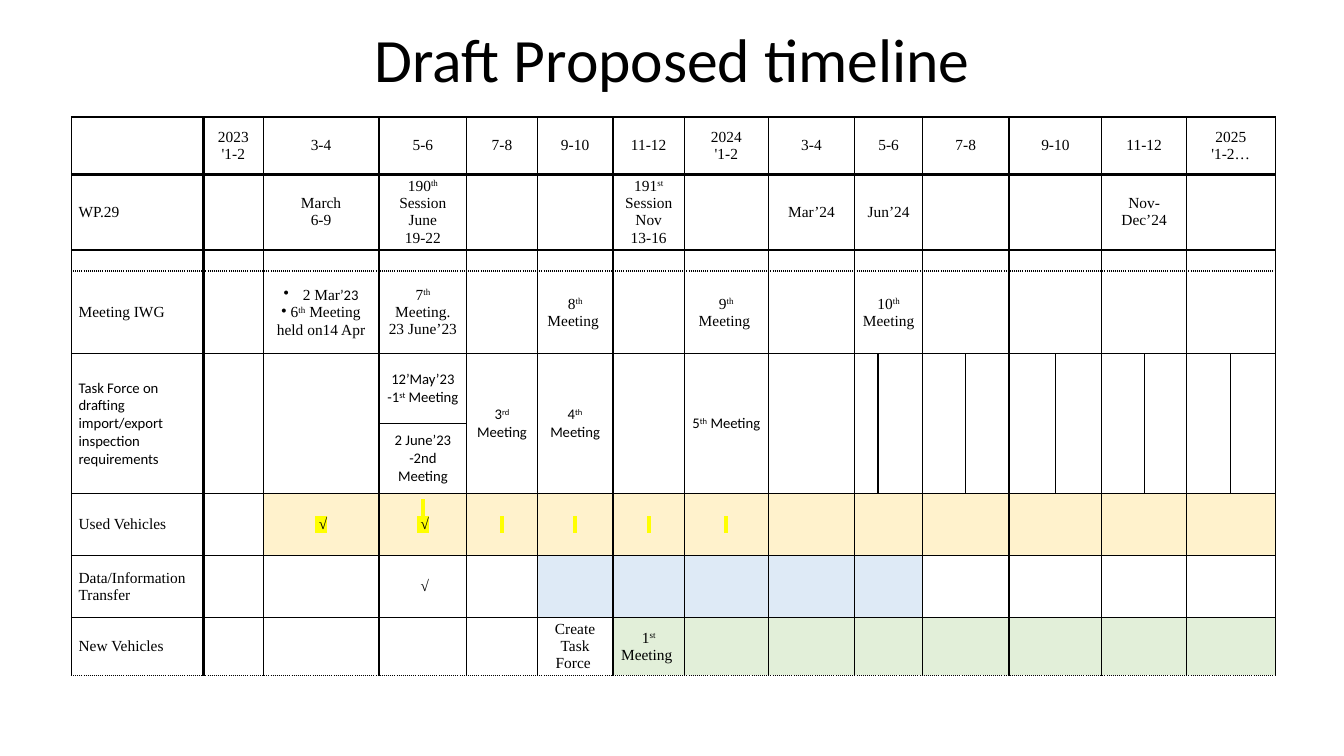
import pptx
import pptx.util
import pptx.dml.color
import pptx.enum.text
import pptx.oxml.ns
from lxml import etree

Inches, Pt = pptx.util.Inches, pptx.util.Pt
RGBColor = pptx.dml.color.RGBColor
PP_ALIGN, MSO_ANCHOR = pptx.enum.text.PP_ALIGN, pptx.enum.text.MSO_ANCHOR
qn = pptx.oxml.ns.qn

COLORS = {"ink": "000000", "mark": "FFFF00", "used": "FFF2CC",
          "data": "DEEAF6", "new": "E2EFD9"}
SERIF, SANS = ("Times New Roman", 11), ("Calibri", 10.5)
TITLE = "Draft Proposed timeline"

# One dict per table row: period number -> paragraphs.
# ^...^ is superscript, |...| is the sans face.
ROWS = [
    {1: ["2023\n'1-2"], 2: ["3-4"], 3: ["5-6"], 4: ["7-8"], 5: ["9-10"],
     6: ["11-12"], 7: ["2024\n'1-2"], 8: ["3-4"], 9: ["5-6"], 10: ["7-8"],
     11: ["9-10"], 12: ["11-12"], 13: ["2025\n'1-2…"]},
    {0: ["WP.29"], 2: ["March\n6-9"], 3: ["190^th^ Session June\n19-22"],
     6: ["191^st ^Session\nNov\n13-16"], 8: ["Mar’24"], 9: ["Jun’24"],
     12: ["Nov-Dec’24"]},
    {},
    {0: ["Meeting IWG"], 2: ["2 Mar|’23|", " 6^th^ Meeting held on14 Apr"],
     3: ["7^th^ Meeting. 23 June’23"], 5: ["8^th^ Meeting "],
     7: ["9^th^ Meeting "], 9: ["10^th^ Meeting "]},
    {0: ["|Task Force on drafting import/export inspection requirements|"],
     3: ["|12’May’23 -1^st^ Meeting|"], 4: ["|3^rd^ Meeting|"],
     5: ["|4^th^ Meeting|"], 7: ["|5^th^ Meeting|"]},
    {3: ["|2 June’23 -2nd Meeting|"]},
    {0: ["Used Vehicles"], 2: [" √"], 3: [" ", " √"],
     4: [" "], 5: [" "], 6: [" "], 7: [" "]},
    {0: ["Data/Information Transfer"], 3: [" √"]},
    {0: ["New Vehicles"], 5: ["Create Task Force "], 6: ["1^st^ Meeting "]},
]
COL_WIDTHS = [1.31, 0.59, 1.15, 0.87, 0.7, 0.75, 0.71, 0.83, 0.86, 0.23,
              0.44, 0.43, 0.43, 0.46, 0.46, 0.42, 0.42, 0.44, 0.44]
ROW_HEIGHTS = [0.57, 0.75, 0.21, 0.82, 0.69, 0.7, 0.61, 0.62, 0.57]
BANDS = {6: ("used", 2, 13), 7: ("data", 5, 9), 8: ("new", 6, 13)}
HEADER, SESSIONS, SESSIONS_END, MEETINGS, TASK_TOP, TASK_END, USED = range(7)
NEW = 8
FIRST_SPLIT = 9   # from this period on, each period takes two columns
SPLIT_TASK = 3    # the period whose two task force meetings are stacked
BULLET_INDENTS = [0.19, 0]
THIN, THICK = 1, 2.25


def add_runs(paragraph, text, marked):
    """Add text, switching superscript at ^ and typeface at |."""
    for f, face_part in enumerate(text.split("|")):
        face, size = SANS if f % 2 else SERIF
        for s, part in enumerate(face_part.split("^")):
            for b, line in enumerate(part.split("\n")):
                if b:
                    paragraph.add_line_break()
                    line_break = paragraph._p.findall(qn("a:br"))[-1]
                    etree.SubElement(line_break, qn("a:rPr"), sz=str(int(size * 100)))
                if not line:
                    continue
                run = paragraph.add_run()
                run.text = line
                run.font.size = Pt(size)
                run.font.color.rgb = RGBColor.from_string(COLORS["ink"])
                props = run.font._element
                if marked:
                    highlight = etree.SubElement(props, qn("a:highlight"))
                    etree.SubElement(highlight, qn("a:srgbClr"), val=COLORS["mark"])
                run.font.name = face
                if s % 2:
                    props.set("baseline", "30000")


def add_bullet(paragraph, indent):
    props = paragraph._p.get_or_add_pPr()
    props.set("marL", str(Inches(indent)))
    props.set("indent", str(-Inches(indent)))
    etree.SubElement(props, qn("a:buChar"), char="•")


def set_borders(cell, row, period):
    sides = {"lnL": (THICK if period == 1 else THIN, "solid"),
             "lnR": (THICK if period == 0 else THIN, "solid")}
    if row != SESSIONS_END:
        sides["lnT"] = (THICK if row == SESSIONS else THIN,
                        "sysDot" if row == MEETINGS else "solid")
    if row != SESSIONS:
        sides["lnB"] = (THICK if row == HEADER else THIN,
                        "sysDot" if row in (SESSIONS_END, NEW) else "solid")
    props = cell._tc.get_or_add_tcPr()
    for position, (side, (width, dash)) in enumerate(sides.items()):
        line = etree.Element(qn("a:" + side), w=str(Pt(width)))
        fill = etree.SubElement(line, qn("a:solidFill"))
        etree.SubElement(fill, qn("a:srgbClr"), val=COLORS["ink"])
        etree.SubElement(line, qn("a:prstDash"), val=dash)
        props.insert(position, line)


def fill_cell(cell, row, period):
    cell.margin_left = cell.margin_right = Inches(0.07)
    cell.margin_top = cell.margin_bottom = 0
    cell.vertical_anchor = MSO_ANCHOR.MIDDLE
    band, start, end = BANDS.get(row, ("", 1, 0))
    if start <= period <= end:
        cell.fill.solid()
        cell.fill.fore_color.rgb = RGBColor.from_string(COLORS[band])
    else:
        cell.fill.background()
    set_borders(cell, row, period)

    paragraphs = ROWS[row].get(period, [])
    if not paragraphs:
        etree.SubElement(cell.text_frame.paragraphs[0]._p, qn("a:endParaRPr"), sz="1100")
    for i, text in enumerate(paragraphs):
        paragraph = cell.text_frame.add_paragraph() if i else cell.text_frame.paragraphs[0]
        paragraph.alignment = PP_ALIGN.CENTER if period else PP_ALIGN.LEFT
        if (row, period) == (MEETINGS, 2):
            add_bullet(paragraph, BULLET_INDENTS[i])
        add_runs(paragraph, text, row == USED and period > 0)
    if row == USED and len(paragraphs) > 1:
        cell.margin_bottom = Inches(0.17)  # keeps the tick level with its row


def merge_cells(table):
    for row in range(len(ROWS)):
        if row not in (TASK_TOP, TASK_END):
            for col in range(FIRST_SPLIT, len(COL_WIDTHS), 2):
                table.cell(row, col).merge(table.cell(row, col + 1))
    for col in range(len(COL_WIDTHS)):
        if col != SPLIT_TASK:
            table.cell(TASK_TOP, col).merge(table.cell(TASK_END, col))


def add_timeline(slide):
    frame = slide.shapes.add_table(
        len(ROWS), len(COL_WIDTHS), Inches(0.71), Inches(1.16),
        Inches(sum(COL_WIDTHS)), Inches(sum(ROW_HEIGHTS)))
    table = frame.table
    table.first_row = table.horz_banding = False
    style = table._tbl.tblPr.find(qn("a:tableStyleId"))
    style.text = "{2D5ABB26-0587-4C30-8999-92F81FD0307C}"  # no style, no grid
    for column, width in zip(table.columns, COL_WIDTHS):
        column.width = Inches(width)
    for table_row, height in zip(table.rows, ROW_HEIGHTS):
        table_row.height = Inches(height)
    merge_cells(table)
    for row in range(len(ROWS)):
        for col in range(len(COL_WIDTHS)):
            cell = table.cell(row, col)
            if not cell.is_spanned:
                period = col if col < FIRST_SPLIT else FIRST_SPLIT + (col - FIRST_SPLIT) // 2
                fill_cell(cell, row, period)


def add_title(slide):
    title = slide.shapes.title
    title.left, title.top = Inches(0.92), 0
    title.width, title.height = Inches(11.5), Inches(1.25)
    title.text_frame.vertical_anchor = MSO_ANCHOR.MIDDLE
    paragraph = title.text_frame.paragraphs[0]
    paragraph.alignment = PP_ALIGN.CENTER
    paragraph.line_spacing = 0.9
    run = paragraph.add_run()
    run.text = TITLE
    run.font.size = Pt(44)
    run.font.name = "Calibri"
    run.font.color.rgb = RGBColor.from_string(COLORS["ink"])


def main():
    deck = pptx.Presentation()
    deck.slide_width, deck.slide_height = Inches(13.33), Inches(7.5)
    slide = deck.slides.add_slide(deck.slide_layouts[5])
    add_title(slide)
    add_timeline(slide)
    deck.save("out.pptx")


if __name__ == "__main__":
    main()
